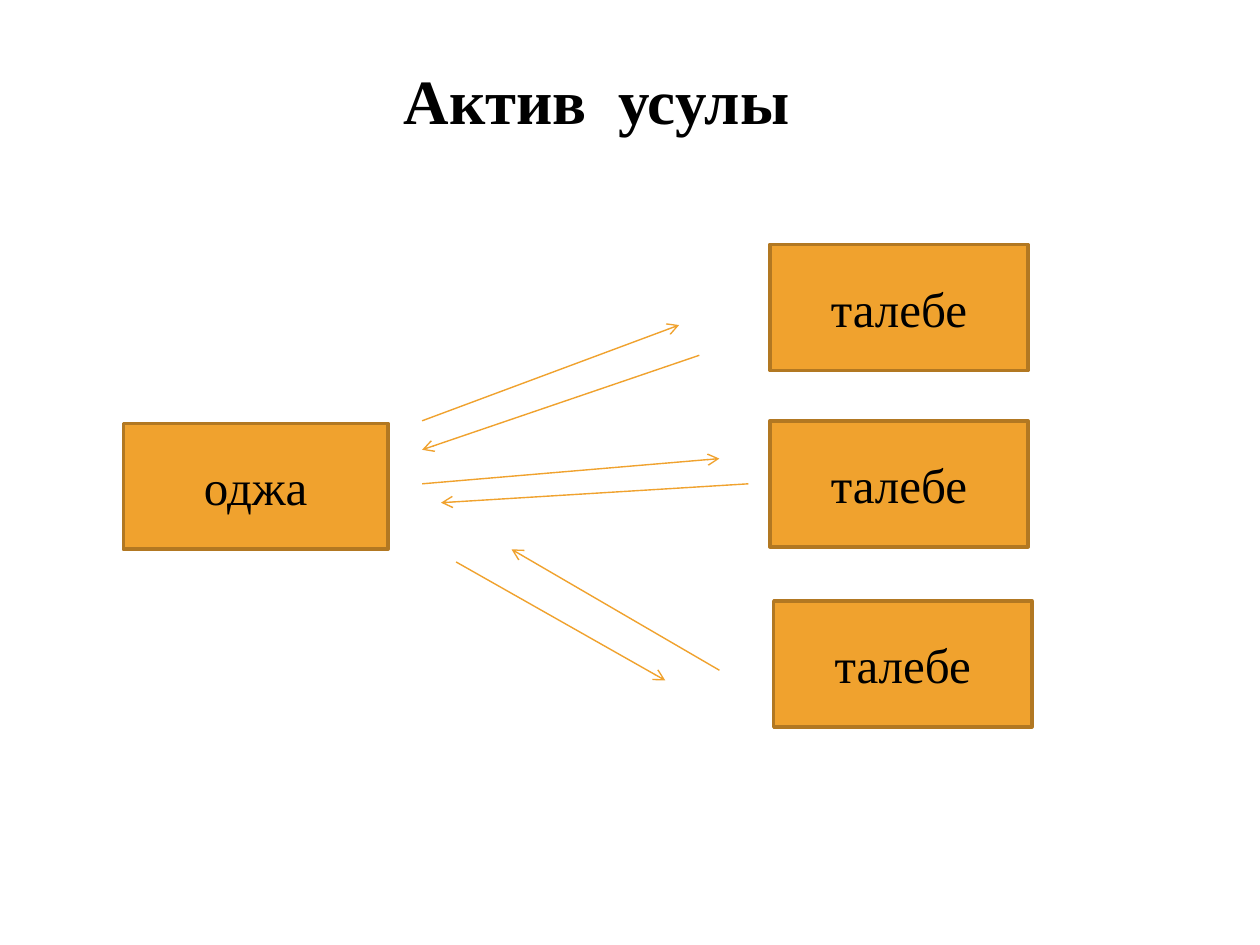
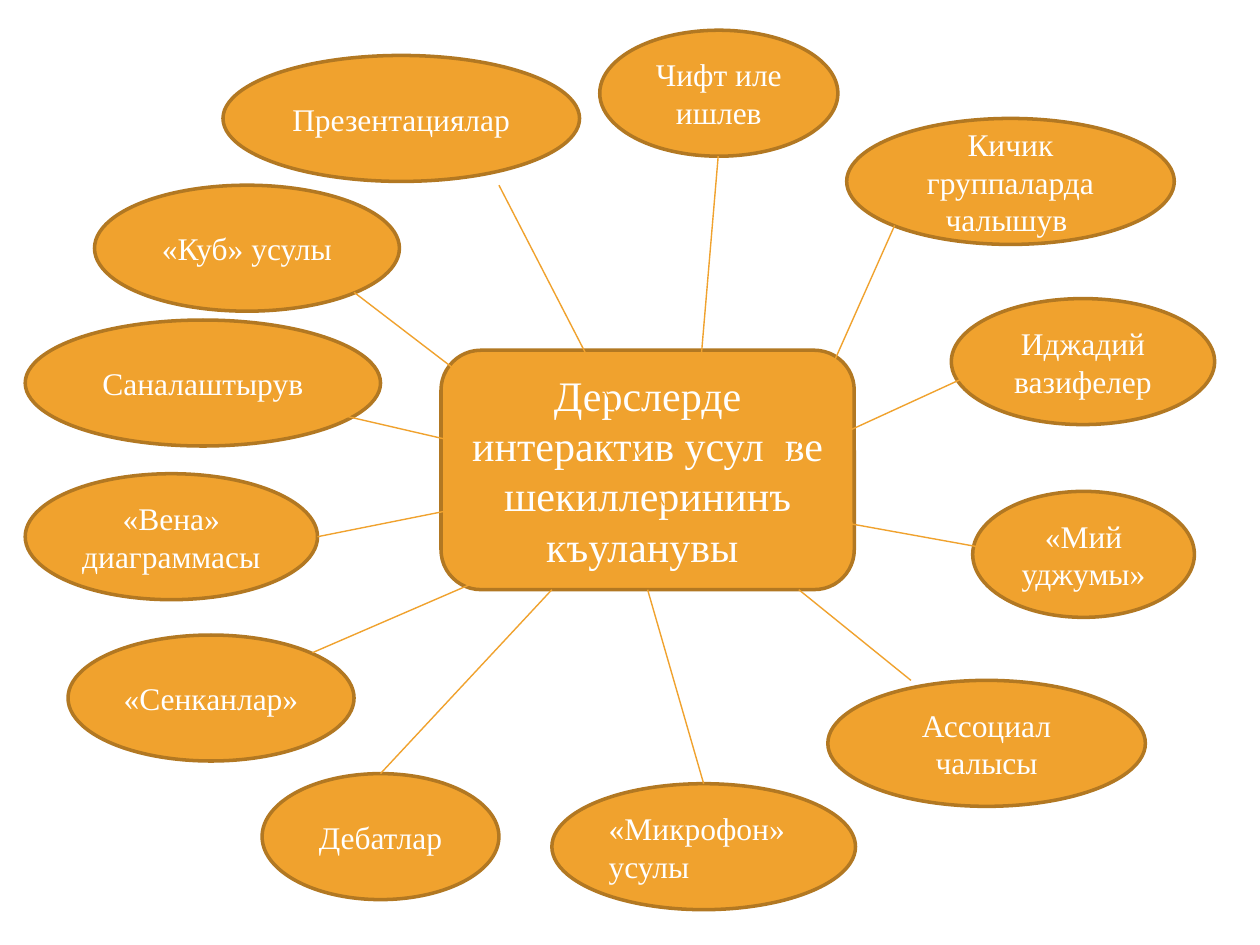
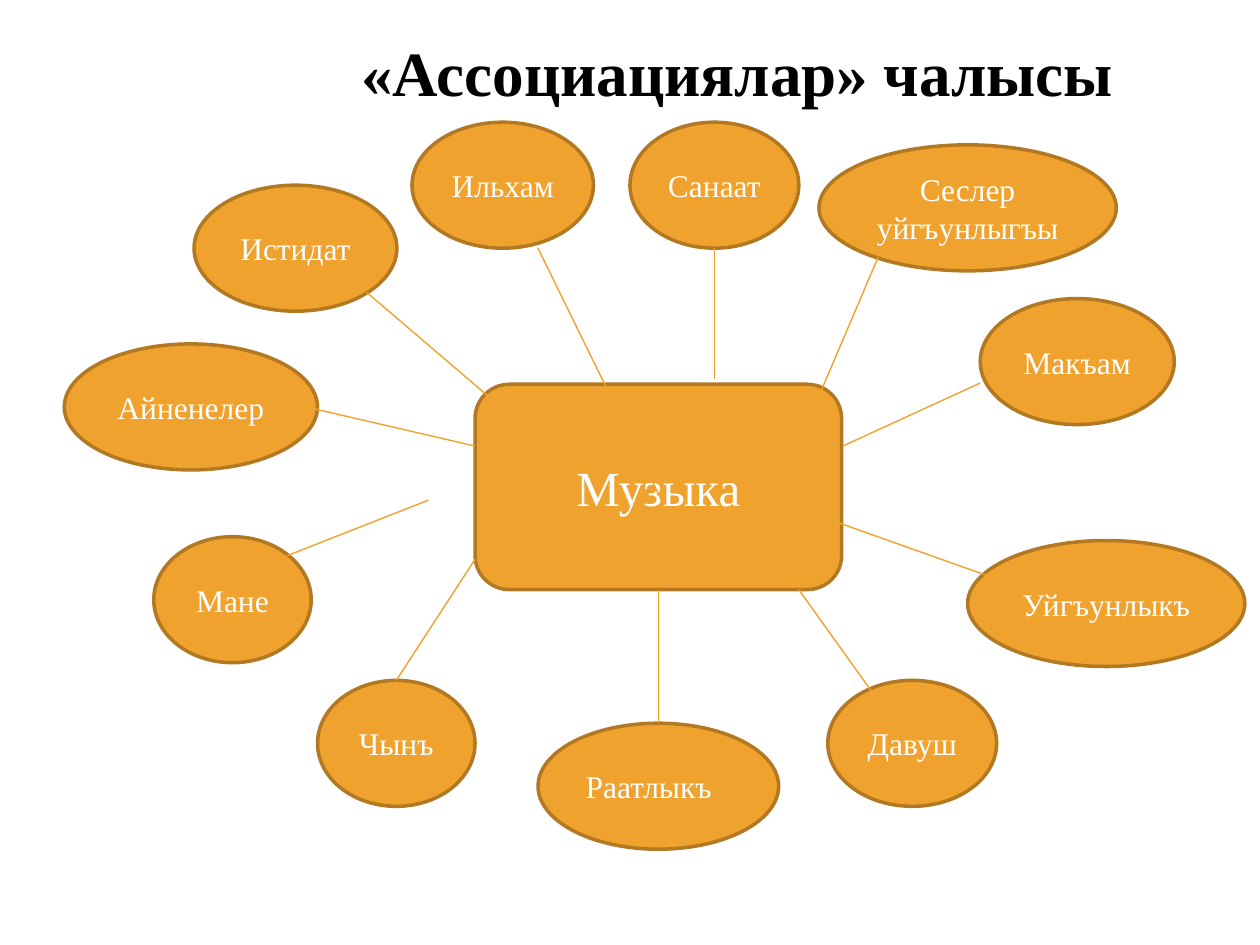
import dataclasses

import lxml.etree
import pptx
import pptx.dml.color
import pptx.enum.shapes
import pptx.enum.text
import pptx.oxml.ns
import pptx.util

SHAPES = pptx.enum.shapes.MSO_SHAPE
ALIGN = pptx.enum.text.PP_ALIGN
EMU_PER_PX = 9144  # 100 px to the inch
TOP, BOTTOM = 0, 2  # connection sites
BUBBLE_HEIGHT = 100


@dataclasses.dataclass(frozen=True)
class Theme:
    font: str = "Times New Roman"
    fill: str = "F0A22E"
    border: str = "B27822"
    dark: str = "000000"
    light: str = "FFFFFF"
    title_size: int = 36
    box_size: int = 28
    hub_size: int = 24
    bubble_size: int = 18
    border_width: float = 2
    link_width: float = 0.79


THEME = Theme()


def px(value):
    return pptx.util.Emu(value * EMU_PER_PX)


def rgb(value):
    return pptx.dml.color.RGBColor.from_string(value)


def write_text(shape, text, size, color, align, bold=False):
    shape.text_frame.text = text
    for paragraph in shape.text_frame.paragraphs:
        paragraph.alignment = align
        for run in paragraph.runs:
            run.font.name = THEME.font
            run.font.size = pptx.util.Pt(size)
            run.font.bold = bold
            run.font.color.rgb = rgb(color)


def add_title(slide, text, left, top, width, height, align):
    box = slide.shapes.add_textbox(px(left), px(top), px(width), px(height))
    write_text(box, text, THEME.title_size, THEME.dark, align, bold=True)
    box.text_frame.word_wrap = False
    box.text_frame.auto_size = pptx.enum.text.MSO_AUTO_SIZE.SHAPE_TO_FIT_TEXT


def add_node(slide, preset, text, place, size, color=THEME.light, align=ALIGN.CENTER):
    shape = slide.shapes.add_shape(preset, *(px(value) for value in place))
    shape.shadow.inherit = False
    shape.fill.solid()
    shape.fill.fore_color.rgb = rgb(THEME.fill)
    shape.line.color.rgb = rgb(THEME.border)
    shape.line.width = pptx.util.Pt(THEME.border_width)
    shape.text_frame.word_wrap = True
    shape.text_frame.vertical_anchor = pptx.enum.text.MSO_ANCHOR.MIDDLE
    write_text(shape, text, size, color, align)
    return shape


def add_bubbles(slide, bubbles, left_aligned):
    """Draw the ellipses and return them by label."""
    return {
        text: add_node(slide, SHAPES.OVAL, text, (left, top, width, BUBBLE_HEIGHT),
                       THEME.bubble_size,
                       align=ALIGN.LEFT if text == left_aligned else ALIGN.CENTER)
        for text, left, top, width in bubbles
    }


def add_link(slide, start, end, arrow=False):
    """Join two ends, each a point (x, y) or a (shape, site) pair."""
    points = [(0, 0) if hasattr(first, "shape_type") else (px(first), px(second))
              for first, second in (start, end)]
    link = slide.shapes.add_connector(
        pptx.enum.shapes.MSO_CONNECTOR.STRAIGHT, *points[0], *points[1])
    for connect, place in ((link.begin_connect, start), (link.end_connect, end)):
        if hasattr(place[0], "shape_type"):
            connect(*place)
    link.line.color.rgb = rgb(THEME.fill)
    link.line.width = pptx.util.Pt(THEME.link_width)
    qualified = pptx.oxml.ns.qn
    properties = link._element.spPr
    if arrow:
        line = properties.find(qualified("a:ln"))
        lxml.etree.SubElement(line, qualified("a:tailEnd"), type="arrow")
    lxml.etree.SubElement(properties, qualified("a:effectLst"))


def add_links(slide, links):
    """Draw the spokes of a mind map; the first one carries an arrowhead."""
    for index, (start, end) in enumerate(links):
        add_link(slide, start, end, arrow=index == 0)


def build_active_method(slide):
    # Teacher and pupils
    for text, *place in (
        ("оджа", 98, 336, 210, 100),
        ("талебе", 611, 194, 205, 100),
        ("талебе", 611, 334, 205, 100),
        ("талебе", 614, 477, 205, 100),
    ):
        add_node(slide, SHAPES.RECTANGLE, text, place, THEME.box_size, THEME.dark)
    add_title(slide, "Актив  усулы", 309, 44, 329, 71, ALIGN.CENTER)

    # Arrows to the pupils, then back to the teacher
    for start, end in (
        ((335, 334), (539, 258)),
        ((335, 384), (571, 364)),
        ((362, 446), (528, 540)),
        ((555, 282), (335, 357)),
        ((594, 384), (350, 399)),
        ((571, 532), (406, 436)),
    ):
        add_link(slide, start, end, arrow=True)


def build_interactive_methods(slide):
    hub = add_node(slide, SHAPES.ROUNDED_RECTANGLE,
                   "Дерслерде интерактив усул  ве шекиллерининъ къуланувы ",
                   (350, 278, 328, 190), THEME.hub_size)
    microphone = "«Микрофон»\nусулы"
    bubbles = add_bubbles(slide, (
        ("«Куб» усулы", 75, 147, 242),
        ("Саналаштырув", 20, 254, 282),
        ("Иджадий вазифелер", 755, 237, 209),
        ("Кичик группаларда чалышув ", 672, 94, 260),
        ("Чифт иле ишлев", 476, 24, 189),
        ("Презентациялар", 177, 44, 283),
        ("«Вена» диаграммасы", 20, 376, 232),
        ("Дебатлар", 208, 614, 188),
        (microphone, 438, 622, 241),
        ("Ассоциал чалысы", 657, 540, 252),
        ("«Мий уджумы»", 772, 390, 176),
        ("«Сенканлар»", 54, 504, 227),
    ), left_aligned=microphone)

    # Spokes, counter-clockwise from the upper right
    add_links(slide, (
        ((710, 179), (622, 377)),
        ((570, 124), (555, 301)),
        ((396, 147), (527, 401)),
        ((281, 232), (396, 320)),
        ((230, 320), (377, 354)),
        ((252, 426), (377, 401)),
        ((248, 518), (396, 454)),
        ((438, 468), (bubbles["Дебатлар"], TOP)),
        ((bubbles[microphone], TOP), (hub, BOTTOM)),
        ((723, 540), (634, 468)),
        ((660, 413), (815, 441)),
        ((778, 294), (669, 344)),
    ))


def build_associations(slide):
    hub = add_node(slide, SHAPES.ROUNDED_RECTANGLE, "Музыка",
                   (377, 305, 291, 163), THEME.box_size)
    bubbles = add_bubbles(slide, (
        ("Истидат", 154, 147, 161),
        ("Айненелер", 51, 273, 201),
        ("Макъам", 778, 237, 154),
        ("Сеслер уйгъунлыгъы", 650, 115, 236),
        ("Санаат", 500, 97, 134),
        ("Ильхам", 327, 97, 144),
        ("Чынъ", 252, 540, 125),
        ("Раатлыкъ", 427, 574, 191),
        ("Давуш", 657, 540, 134),
        ("Уйгъунлыкъ", 768, 429, 220),
        ("Мане", 122, 426, 125),
    ), left_aligned="Раатлыкъ")

    # Spokes, counter-clockwise from the upper right
    add_links(slide, (
        ((697, 204), (613, 401)),
        ((567, 197), (567, 301)),
        ((427, 197), (527, 401)),
        ((291, 232), (394, 320)),
        ((230, 320), (377, 354)),
        ((228, 441), (340, 397)),
        ((377, 444), (bubbles["Чынъ"], TOP)),
        ((bubbles["Раатлыкъ"], TOP), (hub, BOTTOM)),
        ((697, 556), (634, 468)),
        ((660, 413), (815, 468)),
        ((778, 304), (669, 354)),
    ))
    add_title(slide, "«Ассоциациялар» чалысы", 277, 22, 623, 71, ALIGN.LEFT)


def main():
    presentation = pptx.Presentation()
    presentation.slide_width, presentation.slide_height = px(1000), px(750)
    blank = presentation.slide_layouts[6]
    for build in (build_active_method, build_interactive_methods, build_associations):
        build(presentation.slides.add_slide(blank))
    presentation.save("out.pptx")


if __name__ == "__main__":
    main()
